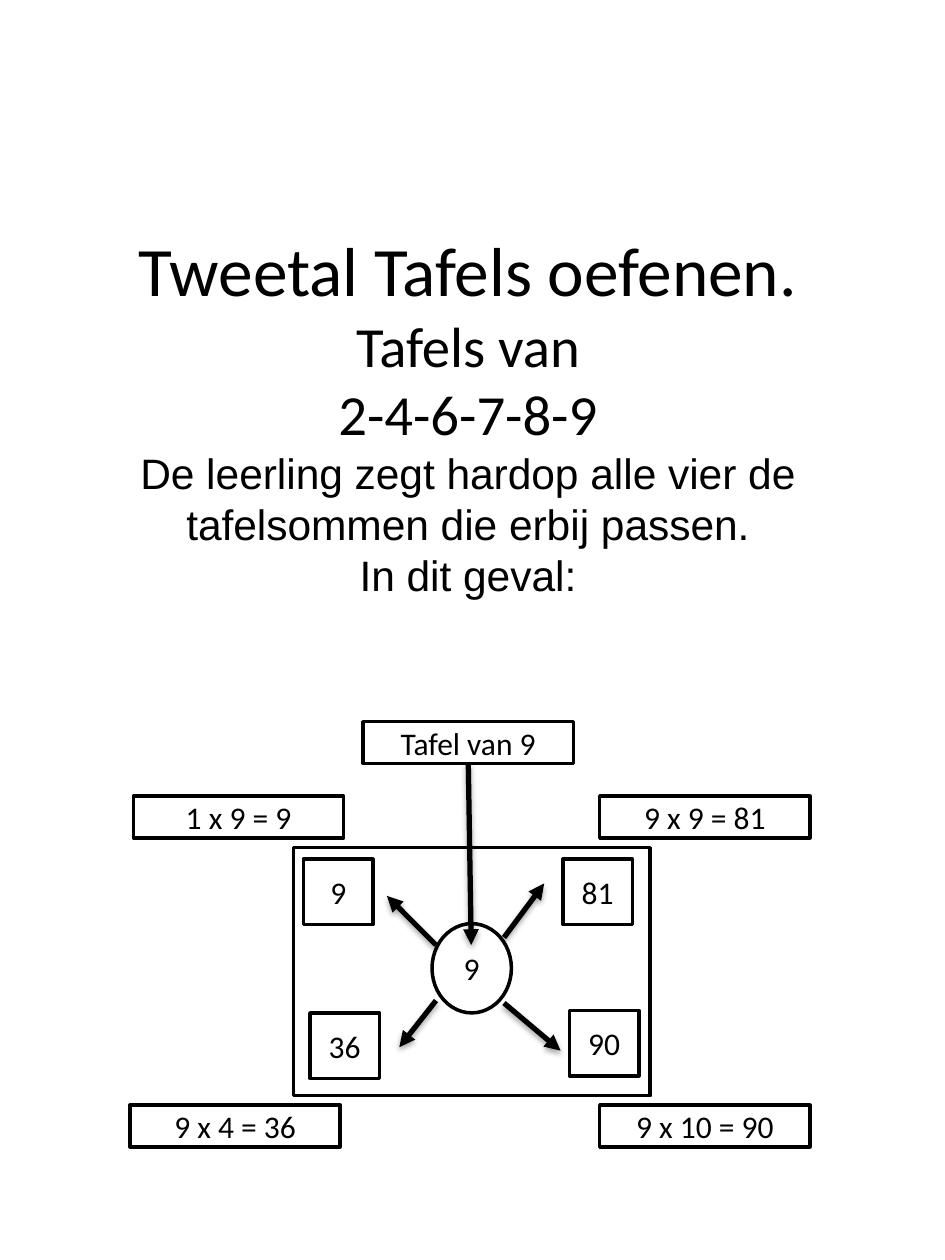
from dataclasses import dataclass
from lxml.etree import SubElement
from pptx import Presentation
from pptx.dml.color import RGBColor
from pptx.enum.shapes import MSO_CONNECTOR, MSO_SHAPE
from pptx.enum.text import MSO_ANCHOR, MSO_AUTO_SIZE, PP_ALIGN
from pptx.oxml import parse_xml
from pptx.oxml.ns import nsdecls, qn
from pptx.util import Cm, Pt


@dataclass
class Theme:
    ink: RGBColor = RGBColor(0, 0, 0)
    paper: RGBColor = RGBColor(255, 255, 255)
    face: str = "Calibri"
    plain: str = "Arial"
    head: float = 39.6
    sub: float = 32.4
    body: float = 24.3
    label: float = 18
    edge: float = 2
    arrow: float = 3


theme = Theme()


def write(para, text, size=theme.label, face=theme.face):
    para.alignment = PP_ALIGN.CENTER
    run = para.add_run()
    run.text = text
    run.font.size = Pt(size)
    run.font.name = face
    run.font.color.rgb = theme.ink


def draw(kind, left, top, width, height, text=""):
    shape = slide.shapes.add_shape(kind, Cm(left), Cm(top), Cm(width), Cm(height))
    shape.shadow.inherit = False
    shape.fill.solid()
    shape.fill.fore_color.rgb = theme.paper
    shape.line.color.rgb = theme.ink
    shape.line.width = Pt(theme.edge)
    if text:
        shape.text_frame.vertical_anchor = MSO_ANCHOR.MIDDLE
        write(shape.text_frame.paragraphs[0], text)
    return shape


deck = Presentation()
deck.slide_width, deck.slide_height = Cm(19.05), Cm(25.4)
slide = deck.slides.add_slide(deck.slide_layouts[5])

title = slide.shapes.title
title.left, title.top, title.width, title.height = Cm(0.86), Cm(2.64), Cm(17.15), Cm(11.4)
frame = title.text_frame
frame.auto_size = MSO_AUTO_SIZE.NONE
frame.vertical_anchor = MSO_ANCHOR.MIDDLE
lines = [
    ("Tweetal Tafels oefenen.", theme.head, theme.face),
    ("Tafels van", theme.sub, theme.face),
    ("2-4-6-7-8-9", theme.sub, theme.face),
    ("De leerling zegt hardop alle vier de tafelsommen die erbij passen.", theme.body, theme.plain),
    ("In dit geval:", theme.body, theme.plain),
]
for row, (text, size, face) in enumerate(lines):
    para = frame.add_paragraph() if row else frame.paragraphs[0]
    write(para, text, size=size, face=face)

draw(MSO_SHAPE.RECTANGLE, 5.92, 17.09, 7.19, 5)
draw(MSO_SHAPE.OVAL, 8.71, 18.62, 1.6, 1.8, "9")

for text, left, top in [("9", 6.12, 17.32), ("36", 6.25, 20.42), ("90", 11.48, 20.37), ("81", 11.35, 17.32)]:
    draw(MSO_SHAPE.RECTANGLE, left, top, 1.4, 1.32, text)

labels = [
    ("1 x 9 = 9", 2.69, 16.05),
    ("9 x 4 = 36", 2.62, 22.28),
    ("9 x 10 = 90", 12.09, 22.28),
    ("9 x 9 = 81", 12.09, 16.05),
    ("Tafel van 9", 7.32, 14.55),
]
for text, left, top in labels:
    table = draw(MSO_SHAPE.RECTANGLE, left, top, 4.24, 0.84, text)

arrows = [
    (8.79, 19.05, 7.8, 18.06),
    (10.16, 18.9, 10.97, 17.81),
    (10.16, 20.22, 11.3, 21.18),
    (8.79, 20.17, 8.05, 21.11),
    (9.44, 15.39, 9.5, 19.05),
]
for ends in arrows:
    arrow = slide.shapes.add_connector(MSO_CONNECTOR.STRAIGHT, *map(Cm, ends))
    arrow.line.color.rgb = theme.ink
    arrow.line.width = Pt(theme.arrow)
    SubElement(arrow.line._get_or_add_ln(), qn("a:tailEnd"), type="triangle")
    arrow._element.spPr.append(parse_xml(
        f'<a:effectLst {nsdecls("a")}>'
        '<a:outerShdw blurRad="40000" dist="23000" dir="5400000" rotWithShape="0">'
        f'<a:srgbClr val="{theme.ink}"><a:alpha val="35000"/></a:srgbClr>'
        '</a:outerShdw></a:effectLst>'))
arrow.begin_connect(table, 2)

deck.save("out.pptx")
